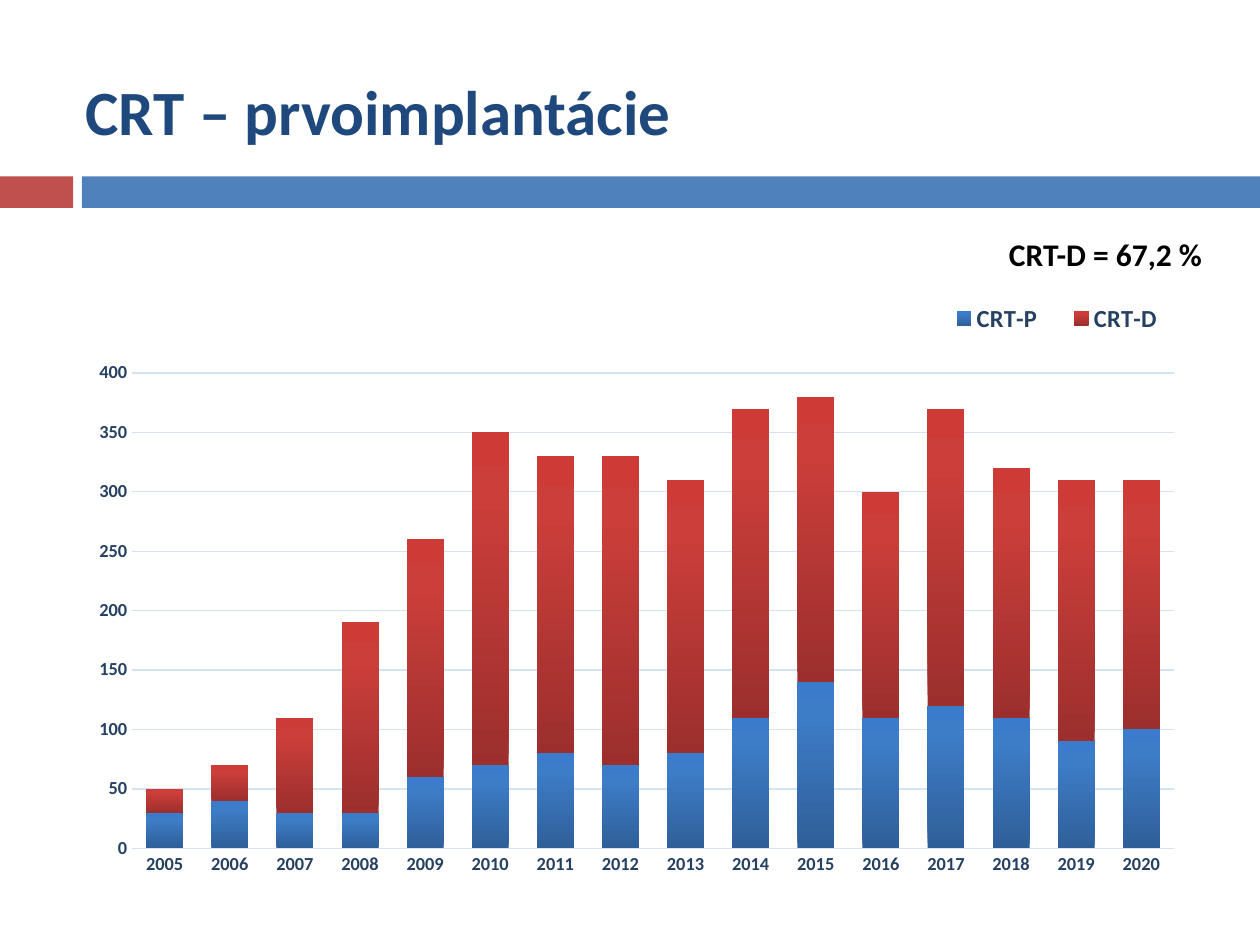
from copy import deepcopy
from dataclasses import dataclass

from pptx import Presentation
from pptx.chart.data import CategoryChartData
from pptx.dml.color import RGBColor
from pptx.enum.chart import XL_CHART_TYPE, XL_LEGEND_POSITION, XL_TICK_MARK
from pptx.enum.shapes import MSO_SHAPE
from pptx.enum.text import MSO_ANCHOR
from pptx.oxml import parse_xml
from pptx.oxml.ns import nsdecls, qn
from pptx.util import Inches, Pt

STACKED = XL_CHART_TYPE.COLUMN_STACKED
BOTTOM = XL_LEGEND_POSITION.BOTTOM
NO_TICK = XL_TICK_MARK.NONE
RECT = MSO_SHAPE.RECTANGLE
MIDDLE = MSO_ANCHOR.MIDDLE
TOP = MSO_ANCHOR.TOP


@dataclass(frozen=True)
class Theme:
    font: str = "Calibri"
    title: str = "1F497D"
    note: str = "000000"
    label: str = "254061"
    grid: str = "D4E3F4"
    red: str = "C0504D"
    blue: str = "4F81BD"
    # Column gradients run from the bottom up
    fills: tuple = (("2F5F99", "3D7CC7", "3A7CCB"),
                    ("9C2F2D", "CB3E3A", "CE3B37"))
    stops: tuple = (0, 0.8, 1)
    title_size: float = 36
    note_size: float = 18
    key_size: float = 14
    axis_size: float = 10.5


THEME = Theme()
YEARS = [str(year) for year in range(2005, 2021)]
IMPLANTS = {
    "CRT-P": (30, 40, 30, 30, 60, 70, 80, 70,
              80, 110, 140, 110, 120, 110, 90, 100),
    "CRT-D": (20, 30, 80, 160, 200, 280, 250, 260,
              230, 260, 240, 190, 250, 210, 220, 210),
}


def style(font, size, color):
    font.name = THEME.font
    font.size = Pt(size)
    font.bold = True
    font.color.rgb = RGBColor.from_string(color)


def add_bar(slide, left, width, color):
    bar = slide.shapes.add_shape(
        RECT, Inches(left), Inches(1.4), Inches(width), Inches(0.25))
    bar.shadow.inherit = False
    bar.fill.solid()
    bar.fill.fore_color.rgb = RGBColor.from_string(color)
    bar.line.fill.background()


def add_text(slide, text, box, size, color, anchor=TOP, wrap=True):
    frame = slide.shapes.add_textbox(*map(Inches, box)).text_frame
    frame.word_wrap = wrap
    frame.vertical_anchor = anchor
    frame.text = text
    style(frame.paragraphs[0].font, size, color)


def set_place(parent, index, box, inner=False):
    """Fix the place of a chart part, as fractions of the chart."""
    for old in parent.findall(qn("c:layout")):
        parent.remove(old)
    target = '<c:layoutTarget val="inner"/>' if inner else ""
    modes = '<c:xMode val="edge"/><c:yMode val="edge"/>'
    sizes = "".join(f'<c:{key} val="{val}"/>' for key, val in zip("xywh", box))
    parent.insert(index, parse_xml(
        f'<c:layout {nsdecls("c")}><c:manualLayout>'
        f'{target}{modes}{sizes}</c:manualLayout></c:layout>'))


def fill_series(series, colors):
    fill = series.format.fill
    fill.gradient()
    fill.gradient_angle = 90
    # The default gradient has two stops; a third is needed
    stops = next(series._element.iter(qn("a:gsLst")))
    stops.append(deepcopy(stops[-1]))
    for stop, place, color in zip(fill.gradient_stops, THEME.stops, colors):
        stop.position = place
        stop.color.rgb = RGBColor.from_string(color)


def set_line(line):
    line.color.rgb = RGBColor.from_string(THEME.grid)
    line.width = Pt(0.75)


def style_axes(chart):
    years, count = chart.category_axis, chart.value_axis
    for axis in (years, count):
        axis.major_tick_mark = axis.minor_tick_mark = NO_TICK
        style(axis.tick_labels.font, THEME.axis_size, THEME.label)
    set_line(years.format.line)
    count.minimum_scale, count.maximum_scale = 0, 400
    count.major_unit = 50
    count.format.line.fill.background()
    set_line(count.major_gridlines.format.line)


def add_columns(slide, box):
    data = CategoryChartData()
    data.categories = YEARS
    for name, values in IMPLANTS.items():
        data.add_series(name, values)
    chart = slide.shapes.add_chart(STACKED, *map(Inches, box), data).chart
    chart.has_title = False
    style(chart.font, THEME.axis_size, THEME.label)
    style_axes(chart)

    # Columns
    plot = chart.plots[0]
    plot.gap_width, plot.overlap = 76, 100
    plot.vary_by_categories = False
    for series, colors in zip(plot.series, THEME.fills):
        fill_series(series, colors)

    # Legend and plot area
    chart.has_legend = True
    legend = chart.legend
    legend.position = BOTTOM
    legend.include_in_layout = False
    style(legend.font, THEME.key_size, THEME.label)
    set_place(legend._element, 1, (0.78, 0, 0.22, 0.08))
    area = next(chart.element.iter(qn("c:plotArea")))
    set_place(area, 0, (0.1, 0.127, 0.89, 0.761), inner=True)


def main():
    deck = Presentation()
    deck.slide_width, deck.slide_height = Inches(10), Inches(7.5)
    slide = deck.slides.add_slide(deck.slide_layouts[6])

    # Header band
    add_bar(slide, 0, 0.58, THEME.red)
    add_bar(slide, 0.65, 9.35, THEME.blue)

    # Title and share note
    add_text(slide, "CRT – prvoimplantácie", (0.58, 0.4, 8.83, 0.95),
             THEME.title_size, THEME.title, MIDDLE)
    add_text(slide, "CRT-D = 67,2 %", (7.91, 1.82, 1.77, 0.4),
             THEME.note_size, THEME.note, wrap=False)

    # Implants per year
    add_columns(slide, (0.12, 2.33, 9.29, 4.96))
    deck.save("out.pptx")


if __name__ == "__main__":
    main()
